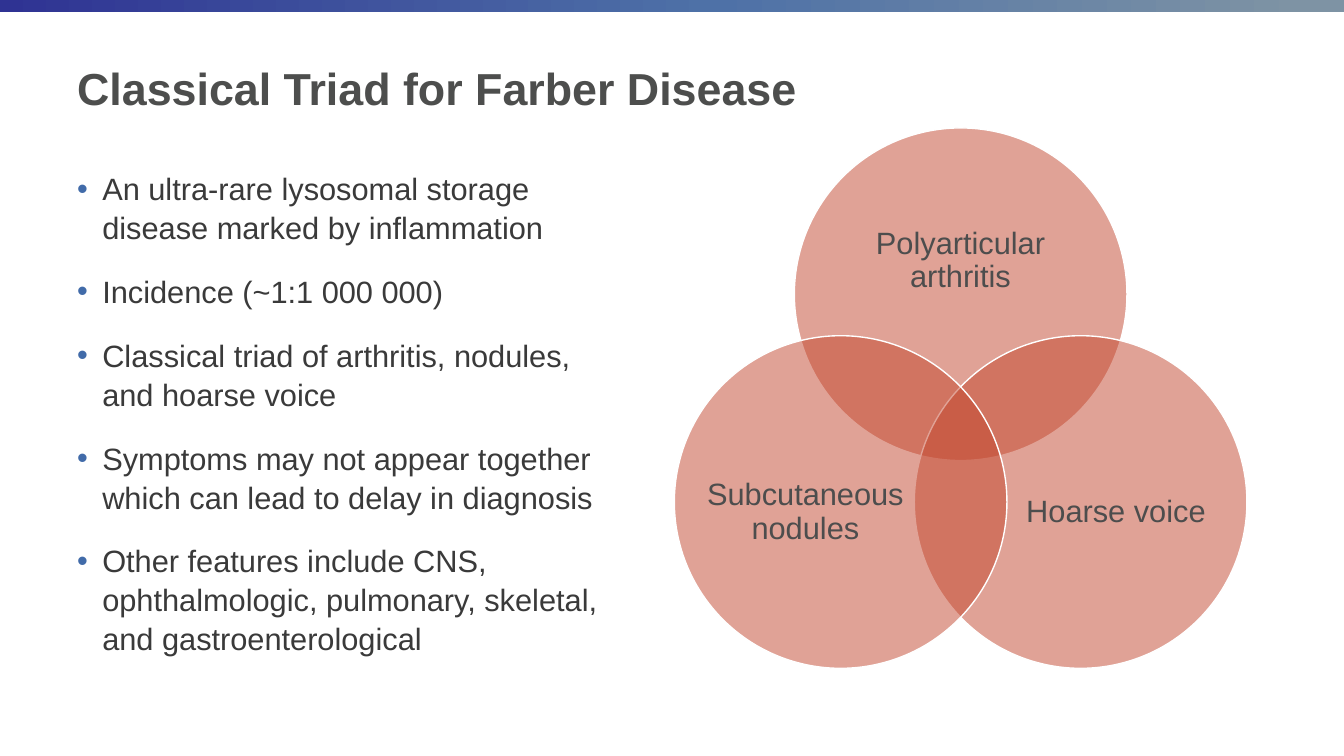
from lxml import etree
from pptx import Presentation
from pptx.dml.color import RGBColor
from pptx.enum import shapes, text
from pptx.oxml import ns
from pptx.util import Pt


def color(code):
    return RGBColor.from_string(code)


def write(box, line, size, code, bold=False):
    """Put one line of text in a new paragraph, or in the empty first one."""
    frame = box.text_frame
    frame.word_wrap = True
    para = frame.paragraphs[0]
    if para.runs:
        para = frame.add_paragraph()
    run = para.add_run()
    run.text = line
    font = run.font
    font.name, font.size, font.bold = "Arial", Pt(size), bold
    font.color.rgb = color(code)
    return para


deck = Presentation()
deck.slide_width, deck.slide_height = Pt(960), Pt(540)
slide = deck.slides.add_slide(deck.slide_layouts[6])
parts = slide.shapes

# Top bar with a three-stop gradient
bar = parts.add_shape(shapes.MSO_SHAPE.RECTANGLE, 0, 0, Pt(960), Pt(8.6))
bar.shadow.inherit = False
bar.line.fill.background()
bar.fill.gradient()
bar.fill.gradient_angle = 0
stops = bar._element.spPr.find(".//" + ns.qn("a:gsLst"))
for stop in list(stops):
    stops.remove(stop)
for place, code in [(0, "2F3393"), (53, "4E71A7"), (97, "7E93A4")]:
    stop = etree.SubElement(stops, ns.qn("a:gs"), pos=str(place * 1000))
    etree.SubElement(stop, ns.qn("a:srgbClr"), val=code)

title = parts.add_textbox(Pt(48), Pt(16), Pt(846), Pt(93.6))
title.text_frame.vertical_anchor = text.MSO_ANCHOR.MIDDLE
write(title, "Classical Triad for Farber Disease", 32, "4D4E4D", True)

# Bulleted facts
facts = [
    "An ultra-rare lysosomal storage disease marked by inflammation",
    "Incidence (~1:1 000 000)",
    "Classical triad of arthritis, nodules, and hoarse voice",
    "Symptoms may not appear together which can lead to delay in diagnosis",
    "Other features include CNS, ophthalmologic, pulmonary, skeletal, "
    "and gastroenterological",
]
body = parts.add_textbox(Pt(48), Pt(116.6), Pt(406.8), Pt(388.8))
for fact in facts:
    para = write(body, fact, 22, "3A3A3A")
    para.space_before = Pt(18)
    para.line_spacing = 1.05
    props = para._p.get_or_add_pPr()
    props.set("marL", str(Pt(18)))
    props.set("indent", str(-Pt(18)))
    tint = etree.SubElement(props, ns.qn("a:buClr"))
    etree.SubElement(tint, ns.qn("a:srgbClr"), val="416BA9")
    etree.SubElement(props, ns.qn("a:buFont"), typeface="Arial")
    etree.SubElement(props, ns.qn("a:buChar"), char="•")

# Venn diagram: circle corner, then label box
size = 237.6
triad = [
    ("Polyarticular arthritis", 567.4, 91.4, (599, 133.2, 174.2, 106.6)),
    ("Hoarse voice", 653.1, 239.8, (725.8, 301, 142.6, 130.3)),
    ("Subcutaneous nodules", 481.7, 239.8, (504, 301, 142.6, 130.3)),
]
for name, left, top, area in triad:
    disc = parts.add_shape(shapes.MSO_SHAPE.OVAL,
                           Pt(left), Pt(top), Pt(size), Pt(size))
    disc.shadow.inherit = False
    disc.fill.solid()
    disc.fill.fore_color.rgb = color("C3472E")
    tint = disc._element.spPr.find(ns.qn("a:solidFill"))[0]
    etree.SubElement(tint, ns.qn("a:alpha"), val="50000")
    disc.line.color.rgb = color("FFFFFF")
    disc.line.width = Pt(1)

    label = parts.add_textbox(*[Pt(n) for n in area])
    frame = label.text_frame
    frame.margin_left = frame.margin_right = 0
    frame.margin_top = frame.margin_bottom = 0
    frame.vertical_anchor = text.MSO_ANCHOR.MIDDLE
    para = write(label, name, 22, "4D4D4D")
    para.alignment = text.PP_ALIGN.CENTER
    para.line_spacing = 0.9
    # Space after is 35% of the font size
    para.space_after = Pt(7.7)

deck.save("out.pptx")
